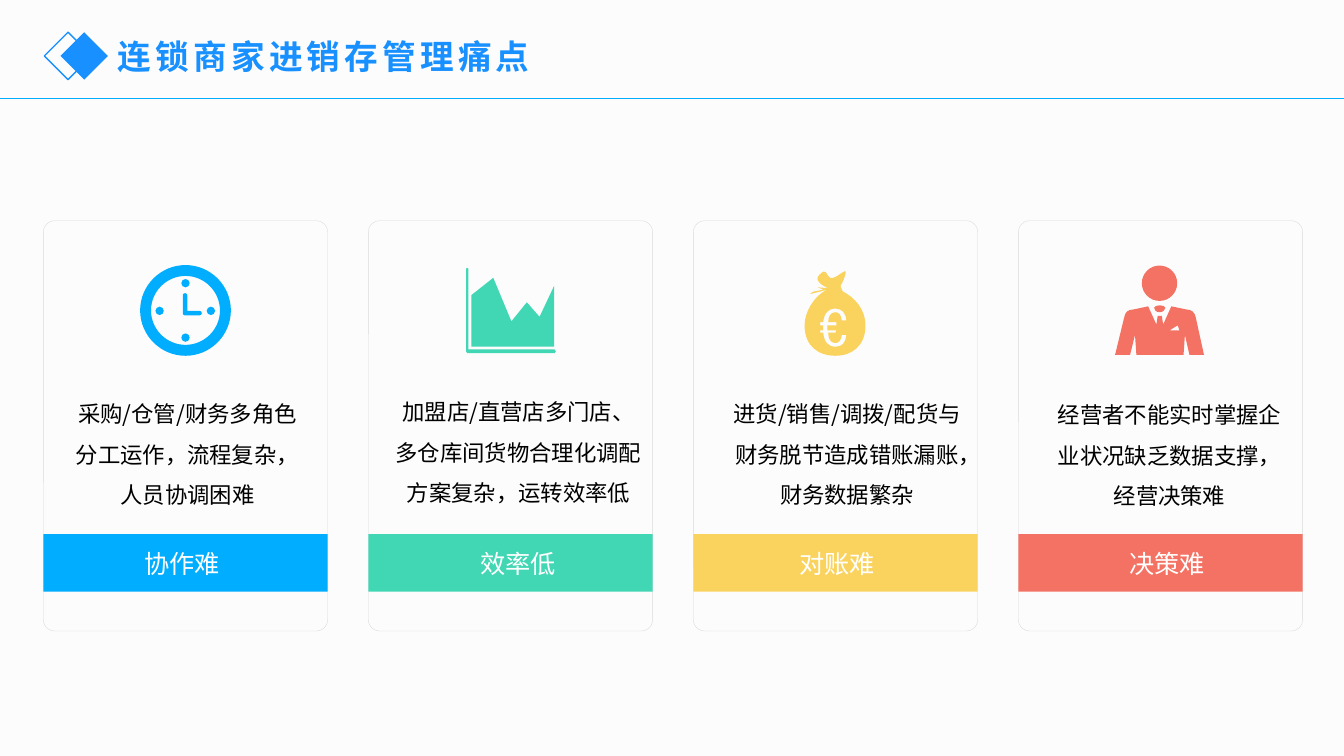
from dataclasses import dataclass
from pptx import Presentation, util as u
from pptx.dml.color import RGBColor
from pptx.enum import shapes, text
from pptx.oxml import parse_xml
from pptx.oxml.ns import nsdecls, qn


@dataclass(frozen=True)
class Theme:
    font: str = "Noto Sans CJK SC"
    paper: str = "FCFCFC"
    title: str = "1890FF"
    rule: str = "00ADFF"
    frame: str = "D9D9D9"
    ink: str = "000000"
    light: str = "FFFFFF"
    title_size: int = 24
    label_size: int = 18
    body_size: int = 16


THEME = Theme()
WIDTH, HEIGHT = 13.33, 7.5
MARGIN, CARD_TOP = 0.43, 2.19
CARD_WIDTH, CARD_HEIGHT = 2.82, 4.07
LAST_CARD = 10.1
ICON_SIZE = 0.9


def apply(target, values):
    for name, value in values.items():
        setattr(target, name, value)


def circle(x, y, radius):
    bend = radius * 0.55
    return [
        (x, y - radius),
        (x + bend, y - radius, x + radius, y - bend, x + radius, y),
        (x + radius, y + bend, x + bend, y + radius, x, y + radius),
        (x - bend, y + radius, x - radius, y + bend, x - radius, y),
        (x - radius, y - bend, x - bend, y - radius, x, y - radius),
    ]


CLOCK = [
    circle(50, 50, 50), circle(50, 50, 38),
    circle(50, 20, 4.6), circle(50, 80, 4.6),
    circle(21.5, 50.5, 4.6), circle(78, 50.5, 4.6),
    [(49.5, 31), (51, 31, 52, 32, 52, 33.5), (52, 50.5), (65.5, 50.5),
     (67, 50.5, 68, 51.5, 68, 53), (68, 54.5, 67, 55.5, 65.5, 55.5), (49.5, 55.5),
     (48, 55.5, 47, 54.5, 47, 53), (47, 33.5), (47, 32, 48, 31, 49.5, 31)],
]
AREA_CHART = [
    [(31, 14), (51, 62), (68, 41), (82, 57), (98, 23), (98, 90), (7, 90), (7, 33)],
    [(2.3, 3), (3, 3, 3.5, 3.5, 3.5, 4), (3.5, 93), (98.5, 93),
     (99.5, 93, 100, 94, 100, 95), (100, 96, 99.5, 97, 98.5, 97), (2.3, 97),
     (1.5, 97, 1, 96, 1, 95), (1, 4), (1, 3.5, 1.5, 3, 2.3, 3)],
]
MONEY_BAG = [
    [(58, 29), (71, 36, 83, 48, 83, 67), (83, 89, 68, 100, 50, 100),
     (31, 100, 16, 89, 16, 67), (16, 48, 30, 32, 41, 27), (34, 29), (22, 32),
     (25, 29.5), (37, 27), (30, 24.5), (42, 25.5), (36, 23, 26, 17, 32, 11),
     (41, 2, 39, 11, 44, 14), (50, 17, 64, 0, 61, 10),
     (60, 14, 58, 19, 55.5, 23), (57, 27)],
    [(51, 63), (51, 66.5), (41, 66.5), (41, 72), (51, 72), (50, 74.5),
     (42, 74.5), (42, 82, 45, 86, 50, 86), (53.5, 86, 56.5, 83, 57, 77),
     (62, 77), (61, 86, 57.5, 90, 50, 90), (42, 90, 37.5, 85, 36.5, 74.5),
     (33, 74.5), (33, 72), (36.5, 72), (36.5, 66.5), (33, 66.5), (33, 63),
     (36.5, 63), (37.5, 53, 42, 48, 50, 48), (57, 48, 61.5, 53, 62, 61),
     (57, 61), (56.5, 55, 53.5, 52, 50, 52), (45, 52, 42, 56, 42, 63)],
]
MANAGER = [
    circle(49, 20, 19.5),
    [(43, 47), (43, 43.5, 55.5, 43.5, 55.5, 47), (55.5, 49, 53, 52, 49, 52),
     (45, 52, 43, 49, 43, 47)],
    [(98, 99), (82, 99), (77, 77), (75.5, 99), (23.5, 99), (22, 77), (16.5, 99),
     (0, 99), (10, 58), (11, 52, 14, 49, 20, 49), (36.5, 45.5), (45.5, 65.5),
     (47, 56), (51.5, 56), (53, 65.5), (62, 45.5), (79, 49),
     (84, 49, 88, 52, 89, 58)],
    [(71, 72), (69, 66.5), (60, 72)],
]

CARDS = [
    dict(color="00ADFF", icon=CLOCK, label="协作难", label_left=0.9,
         body="采购/仓管/财务多角色分工运作，流程复杂，人员协调困难",
         body_box=(0.15, 1.6, 2.56, 1.25)),
    dict(color="41D7B4", icon=AREA_CHART, label="效率低", label_left=1.01,
         body="加盟店/直营店多门店、多仓库间货物合理化调配方案复杂，运转效率低",
         body_box=(0.15, 1.58, 2.68, 1.25)),
    dict(color="FAD35E", icon=MONEY_BAG, label="对账难", label_left=0.95,
         body="进货/销售/调拨/配货与财务脱节造成错账漏账，财务数据繁杂",
         body_box=(0.21, 1.6, 2.63, 1.25)),
    dict(color="F47263", icon=MANAGER, label="决策难", label_left=1,
         body="经营者不能实时掌握企业状况缺乏数据支撑，经营决策难",
         body_box=(0.21, 1.61, 2.58, 1.25)),
]


def paint(shape, fill=None, line=None, weight=1):
    shape.shadow.inherit = False
    if fill:
        shape.fill.solid()
        shape.fill.fore_color.rgb = RGBColor.from_string(fill)
    else:
        shape.fill.background()
    if line:
        shape.line.color.rgb = RGBColor.from_string(line)
        shape.line.width = u.Pt(weight)
    else:
        shape.line.fill.background()


def add_block(page, kind, box, **look):
    shape = page.shapes.add_shape(kind, *map(u.Inches, box))
    paint(shape, **look)
    return shape


def write(frame, words, size, color, bold=False, **layout):
    para = frame.paragraphs[0]
    apply(para, layout)
    span = para.add_run()
    span.text = words
    apply(span.font, dict(size=u.Pt(size), bold=bold, name=THEME.font))
    span.font.color.rgb = RGBColor.from_string(color)
    east = parse_xml(f'<a:ea {nsdecls("a")} typeface="{THEME.font}"/>')
    span.font._element.find(qn("a:latin")).addnext(east)
    return span


def add_words(page, box, words, size, color, wrap, **layout):
    frame = page.shapes.add_textbox(*map(u.Inches, box)).text_frame
    frame.word_wrap = wrap
    write(frame, words, size, color, **layout)


def bend_curves(shape, outlines):
    route = next(shape._element.iter(qn("a:path")))
    segments = iter(route.findall(qn("a:lnTo")))
    for outline in outlines:
        for step in outline[1:]:
            segment = next(segments)
            if len(step) == 6:
                segment.tag = qn("a:cubicBezTo")
                for _ in range(2):
                    extra = next(segments)
                    segment.append(extra[0])
                    route.remove(extra)


def add_icon(page, left, top, outlines, color):
    unit = u.Inches(ICON_SIZE) / 100
    contours = [[(step[i] * unit, step[i + 1] * unit)
                 for step in outline for i in range(0, len(step), 2)]
                for outline in outlines]
    builder = page.shapes.build_freeform(*contours[0][0])
    for index, points in enumerate(contours):
        if index:
            builder.move_to(*points[0])
        builder.add_line_segments(points[1:], close=True)
    shape = builder.convert_to_shape(u.Inches(left), u.Inches(top))
    bend_curves(shape, outlines)
    paint(shape, fill=color)


def add_header(page, title):
    rule = page.shapes.add_connector(
        shapes.MSO_CONNECTOR.STRAIGHT, 0, u.Inches(0.98), u.Inches(WIDTH), u.Inches(0.98))
    rule.line.color.rgb = RGBColor.from_string(THEME.rule)
    rule.line.width = u.Pt(1)
    rule._element.spPr.append(parse_xml(f'<a:effectLst {nsdecls("a")}/>'))
    diamond = shapes.MSO_SHAPE.DIAMOND
    add_block(page, diamond, (0.44, 0.32, 0.47, 0.47), line=THEME.title)
    add_block(page, diamond, (0.6, 0.32, 0.47, 0.47), fill=THEME.title)
    holder = page.shapes.title
    apply(holder, dict(left=u.Inches(1.07), top=u.Inches(0.31),
                       width=u.Inches(5.62), height=u.Inches(0.5)))
    apply(holder.text_frame, dict(word_wrap=True, auto_size=text.MSO_AUTO_SIZE.NONE,
                                  vertical_anchor=text.MSO_ANCHOR.MIDDLE))
    span = write(holder.text_frame, title, THEME.title_size, THEME.title, bold=True,
                 alignment=text.PP_ALIGN.LEFT)
    span.font._element.set("spc", "300")


def add_card(page, left, top, card):
    frame = add_block(page, shapes.MSO_SHAPE.ROUNDED_RECTANGLE,
                      (left, top, CARD_WIDTH, CARD_HEIGHT), line=THEME.frame, weight=0.25)
    frame.adjustments[0] = 0.04
    add_block(page, shapes.MSO_SHAPE.RECTANGLE, (left, top + 3.11, CARD_WIDTH, 0.57),
              fill=card["color"])
    across, down, width, height = card["body_box"]
    add_words(page, (left + across, top + down, width, height), card["body"],
              THEME.body_size, THEME.ink, True,
              alignment=text.PP_ALIGN.CENTER, line_spacing=1.5)
    add_words(page, (left + card["label_left"], top + 3.2, 0.95, 0.4), card["label"],
              THEME.label_size, THEME.light, False)
    add_icon(page, left + (CARD_WIDTH - ICON_SIZE) / 2, top + 0.44, card["icon"], card["color"])


def main():
    deck = Presentation()
    apply(deck, dict(slide_width=u.Inches(WIDTH), slide_height=u.Inches(HEIGHT)))
    page = deck.slides.add_slide(deck.slide_layouts[5])
    page.background.fill.solid()
    page.background.fill.fore_color.rgb = RGBColor.from_string(THEME.paper)
    add_header(page, "连锁商家进销存管理痛点")
    pitch = (LAST_CARD - MARGIN) / (len(CARDS) - 1)
    for column, card in enumerate(CARDS):
        add_card(page, MARGIN + column * pitch, CARD_TOP, card)
    deck.save("out.pptx")


if __name__ == "__main__":
    main()
